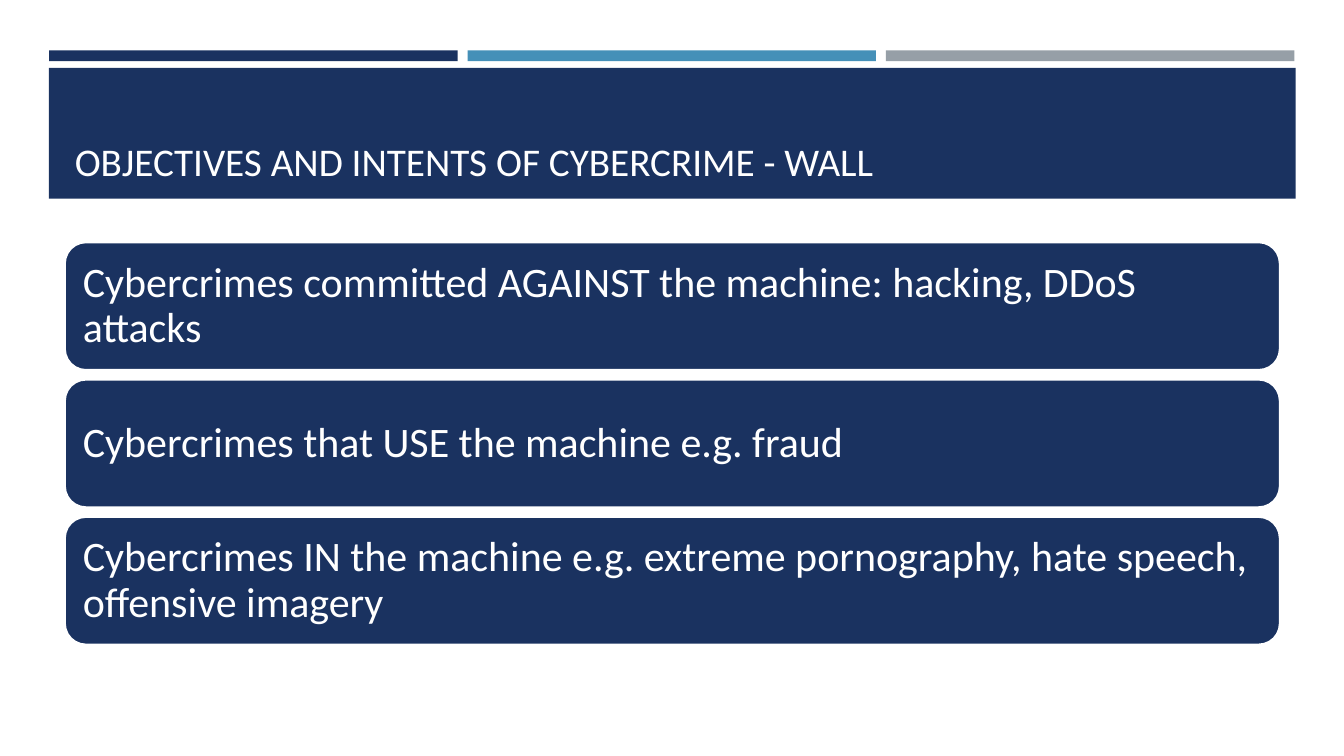
from pptx import Presentation
from pptx.dml.color import RGBColor
from pptx.enum.shapes import MSO_SHAPE
from pptx.enum.text import MSO_ANCHOR, MSO_AUTO_SIZE, PP_ALIGN
from pptx.util import Cm, Pt

COLORS = {"navy": "1A3260", "blue": "4590B8", "grey": "969FA7", "white": "FFFFFF"}
FONT = "Calibri"
TITLE = "OBJECTIVES AND INTENTS OF CYBERCRIME - WALL"
CRIME_TYPES = [
    "Cybercrimes committed AGAINST the machine: hacking, DDoS attacks",
    "Cybercrimes that USE the machine e.g. fraud",
    "Cybercrimes IN the machine e.g. extreme pornography, hate speech, offensive imagery",
]


def color(name):
    """Return the named palette colour."""
    return RGBColor.from_string(COLORS[name])


def add_block(slide, kind, box, fill):
    """Add a flat filled shape without outline in the given box."""
    shape = slide.shapes.add_shape(kind, *box)
    shape.shadow.inherit = False
    shape.fill.solid()
    shape.fill.fore_color.rgb = color(fill)
    shape.line.fill.background()
    return shape


def write_text(frame, text, size, anchor):
    """Write one left-aligned white paragraph and return it."""
    frame.text = text
    frame.word_wrap = True
    frame.auto_size = MSO_AUTO_SIZE.NONE
    frame.vertical_anchor = anchor
    para = frame.paragraphs[0]
    para.alignment = PP_ALIGN.LEFT
    span = para.runs[0]
    span.font.name = FONT
    span.font.size = Pt(size)
    span.font.color.rgb = color("white")
    return para


def add_stripes(slide, box):
    """Split the box into three equal coloured stripes."""
    left, top, width, height = box
    gap = Cm(0.25)
    fills = ["navy", "blue", "grey"]
    stripe_width = (width - gap * (len(fills) - 1)) // len(fills)
    for index, fill in enumerate(fills):
        stripe = (left + index * (stripe_width + gap), top, stripe_width, height)
        add_block(slide, MSO_SHAPE.RECTANGLE, stripe, fill)


def add_banner(slide, box):
    """Fill the box with the banner and set the title inside it."""
    left, top, width, height = box
    margin_x, margin_y = Cm(0.4), Cm(0.24)
    add_block(slide, MSO_SHAPE.RECTANGLE, box, "navy")
    title = slide.shapes.title
    title.left, title.top = left + margin_x, top + margin_y
    title.width, title.height = width - 2 * margin_x, height - 2 * margin_y
    write_text(title.text_frame, TITLE, 28, MSO_ANCHOR.BOTTOM)
    title.element.getparent().append(title.element)


def add_cards(slide, box):
    """Stack one rounded card per crime type in the box."""
    left, top, width, height = box
    gap = Cm(0.23)
    card_height = (height - gap * (len(CRIME_TYPES) - 1)) // len(CRIME_TYPES)
    for index, text in enumerate(CRIME_TYPES):
        place = (left, top + index * (card_height + gap), width, card_height)
        card = add_block(slide, MSO_SHAPE.ROUNDED_RECTANGLE, place, "navy")
        card.line.color.rgb = color("white")
        card.line.width = Pt(1.75)
        frame = card.text_frame
        frame.margin_left = frame.margin_right = Cm(0.3)
        para = write_text(frame, text, 30, MSO_ANCHOR.MIDDLE)
        para.line_spacing = 0.9


def main():
    """Build and save the one-slide deck."""
    deck = Presentation()
    deck.slide_width, deck.slide_height = Cm(33.87), Cm(19.05)
    page = deck.slides.add_slide(deck.slide_layouts[5])
    add_stripes(page, (Cm(1.24), Cm(1.27), Cm(31.38), Cm(0.27)))
    add_banner(page, (Cm(1.23), Cm(1.71), Cm(31.42), Cm(3.3)))
    add_cards(page, (Cm(1.63), Cm(6.1), Cm(30.63), Cm(10.15)))
    deck.save("out.pptx")


if __name__ == "__main__":
    main()
